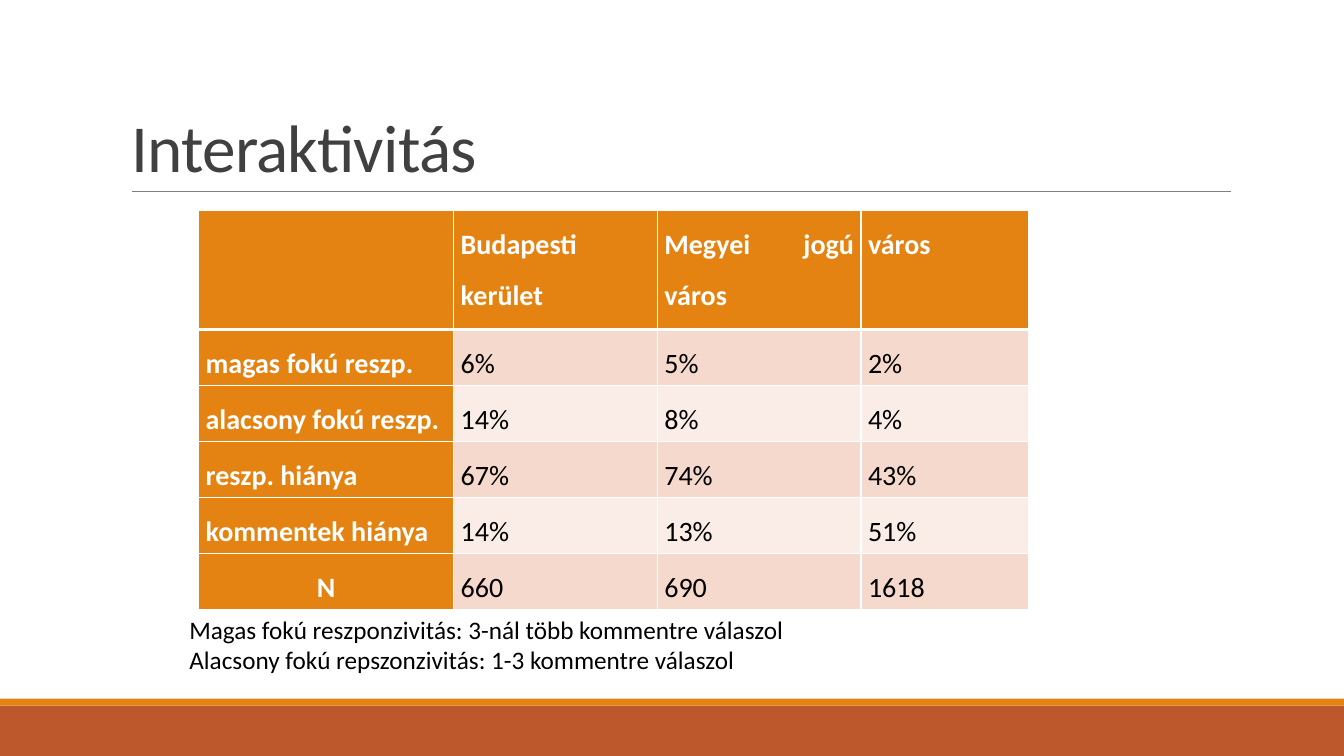
import pptx
import pptx.util
import pptx.dml.color
import pptx.enum.shapes
import pptx.enum.text
import pptx.oxml
import pptx.oxml.ns

Inches, Pt = pptx.util.Inches, pptx.util.Pt
ALIGN = pptx.enum.text.PP_ALIGN
WIDTH, HEIGHT = 13.33, 7.5
FONT = "Calibri"
COLORS = {
    "orange": "E48312", "rust": "BD582C", "rule": "808080", "title": "404040",
    "band_dark": "F5D9CC", "band_light": "FAEDE7", "white": "FFFFFF", "black": "000000",
}
HEADINGS = ["", "Budapesti kerület", "Megyei jogú város", "város"]
RESPONSES = [
    ["magas fokú reszp.", "6%", "5%", "2%"],
    ["alacsony fokú reszp.", "14%", "8%", "4%"],
    ["reszp. hiánya", "67%", "74%", "43%"],
    ["kommentek hiánya", "14%", "13%", "51%"],
    ["N", "660", "690", "1618"],
]
COLUMN_WIDTHS = [2.53, 2.02, 2.02, 1.66]
HEADER_HEIGHT, ROW_HEIGHT = 1.18, 0.555
DEFINITIONS = [
    "Magas fokú reszponzivitás: 3-nál több kommentre válaszol",
    "Alacsony fokú repszonzivitás: 1-3 kommentre válaszol",
]


def rgb(name):
    return pptx.dml.color.RGBColor.from_string(COLORS[name])


def style_runs(paragraph, size, color, bold=False):
    for run in paragraph.runs:
        run.font.name, run.font.size = FONT, Pt(size)
        run.font.bold = bold
        run.font.color.rgb = rgb(color)


def add_footer_bands(slide, left, top, width, height):
    # Thin orange strip on top of the rust band
    strip = height / 8
    for color, band_top, band_height in (
        ("rust", top + strip, height - strip),
        ("orange", top, strip),
    ):
        band = slide.shapes.add_shape(
            pptx.enum.shapes.MSO_SHAPE.RECTANGLE,
            Inches(left), Inches(band_top), Inches(width), Inches(band_height))
        band.shadow.inherit = False
        band.fill.solid()
        band.fill.fore_color.rgb = rgb(color)
        band.line.fill.background()


def add_title(slide, left, top, width, height):
    # Rule under the title, starting at the text edge
    bottom = Inches(top + height)
    rule = slide.shapes.add_connector(
        pptx.enum.shapes.MSO_CONNECTOR.STRAIGHT,
        Inches(left + 0.11), bottom, Inches(left + width + 0.01), bottom)
    rule.line.color.rgb = rgb("rule")
    rule.line.width = Pt(0.5)
    rule._element.spPr.append(pptx.oxml.parse_xml(
        f'<a:effectLst {pptx.oxml.ns.nsdecls("a")}/>'))

    title = slide.shapes.title
    title.left, title.top = Inches(left), Inches(top)
    title.width, title.height = Inches(width), Inches(height)
    frame = title.text_frame
    frame.text = "Interaktivitás"
    frame.auto_size = pptx.enum.text.MSO_AUTO_SIZE.NONE
    frame.vertical_anchor = pptx.enum.text.MSO_ANCHOR.BOTTOM
    heading = frame.paragraphs[0]
    heading.alignment, heading.line_spacing = ALIGN.LEFT, 0.85
    style_runs(heading, 48, "title")
    heading.runs[0].font._element.set("spc", "-50")


def set_borders(cell, top_points, bottom_points):
    properties = cell._tc.get_or_add_tcPr()
    sides = (("L", 1), ("R", 1), ("T", top_points), ("B", bottom_points))
    for position, (side, points) in enumerate(sides):
        properties.insert(position, pptx.oxml.parse_xml(
            f'<a:ln{side} {pptx.oxml.ns.nsdecls("a")} w="{Pt(points)}">'
            f'<a:solidFill><a:srgbClr val="{COLORS["white"]}"/></a:solidFill></a:ln{side}>'))


def fill_cell(cell, text, row, column):
    is_heading = row == 0 or column == 0
    band = "band_dark" if row % 2 else "band_light"
    cell.fill.solid()
    cell.fill.fore_color.rgb = rgb("orange" if is_heading else band)
    set_borders(cell, 3 if row == 1 else 1, 3 if row == 0 else 1)
    cell.margin_left = cell.margin_right = Inches(0.07)
    cell.margin_top = cell.margin_bottom = 0
    if not text:
        return
    cell.text_frame.text = text
    entry = cell.text_frame.paragraphs[0]
    entry.alignment = ALIGN.CENTER if text == "N" else ALIGN.JUSTIFY
    entry.line_spacing = 1.5
    style_runs(entry, 20, "white" if is_heading else "black", is_heading)


def add_response_table(slide, left, top):
    rows = [HEADINGS] + RESPONSES
    heights = [HEADER_HEIGHT] + [ROW_HEIGHT] * len(RESPONSES)
    responses = slide.shapes.add_table(
        len(rows), len(HEADINGS), Inches(left), Inches(top),
        Inches(sum(COLUMN_WIDTHS)), Inches(sum(heights))).table
    for column, width in zip(responses.columns, COLUMN_WIDTHS):
        column.width = Inches(width)
    for row, height in zip(responses.rows, heights):
        row.height = Inches(height)
    for r, texts in enumerate(rows):
        for c, text in enumerate(texts):
            fill_cell(responses.cell(r, c), text, r, c)


def add_definitions(slide, left, top, width, height):
    definitions = slide.shapes.add_textbox(
        Inches(left), Inches(top), Inches(width), Inches(height))
    frame = definitions.text_frame
    frame.word_wrap = True
    frame.auto_size = pptx.enum.text.MSO_AUTO_SIZE.SHAPE_TO_FIT_TEXT
    frame.text = "\n".join(DEFINITIONS)
    for paragraph in frame.paragraphs:
        style_runs(paragraph, 18, "black")


def main():
    deck = pptx.Presentation()
    deck.slide_width, deck.slide_height = Inches(WIDTH), Inches(HEIGHT)
    slide = deck.slides.add_slide(deck.slide_layouts.get_by_name("Title Only"))
    add_footer_bands(slide, 0, 6.93, WIDTH, HEIGHT - 6.93)
    add_title(slide, 1.2, 0.31, 11, 1.59)
    add_response_table(slide, 1.97, 2.09)
    add_definitions(slide, 1.78, 6.04, 9.56, 0.71)
    deck.save("out.pptx")


if __name__ == "__main__":
    main()
